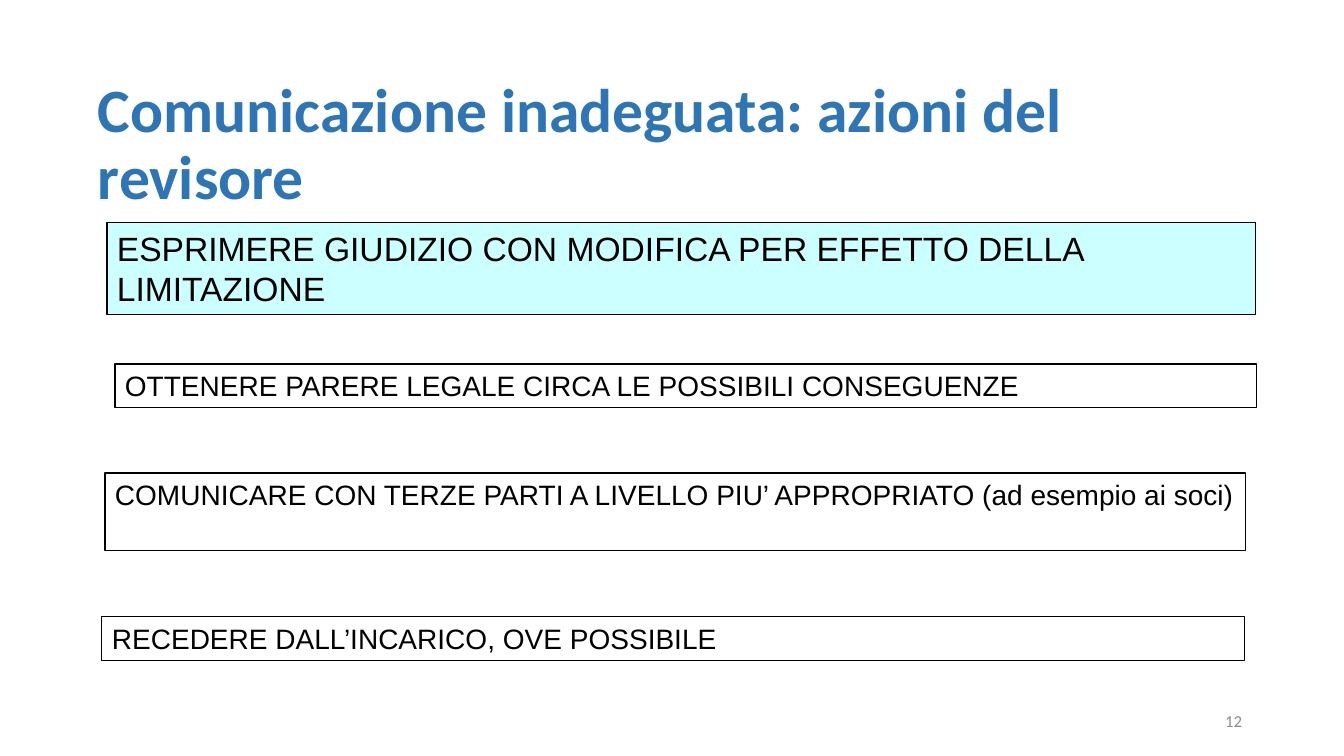
"""Build the slide on the auditor's actions after inadequate communication."""
from dataclasses import dataclass

from pptx import Presentation
from pptx.dml.color import RGBColor
from pptx.enum.shapes import MSO_SHAPE
from pptx.enum.text import MSO_ANCHOR, PP_ALIGN
from pptx.util import Emu, Pt

RECTANGLE = MSO_SHAPE.RECTANGLE
TOP, MIDDLE = MSO_ANCHOR.TOP, MSO_ANCHOR.MIDDLE
LEFT, RIGHT = PP_ALIGN.LEFT, PP_ALIGN.RIGHT
EMU_PER_PX = 914400 / 100.8


def px(length):
    return Emu(round(length * EMU_PER_PX))


@dataclass(frozen=True)
class Theme:
    heading_font: str = "Calibri"
    body_font: str = "Arial"
    title_color: str = "2E75B6"
    text_color: str = "000000"
    number_color: str = "8C8C8C"
    highlight: str = "CCFFFF"
    title_size: int = 44
    lead_size: int = 24
    action_size: int = 20
    number_size: int = 12
    border_width: float = 0.75


class SlideBuilder:
    def __init__(self, slide, theme):
        self.slide = slide
        self.theme = theme

    def set_text(self, shape, text, font_name, size, color, anchor=TOP, align=LEFT):
        frame = shape.text_frame
        frame.word_wrap = True
        frame.vertical_anchor = anchor
        paragraph = frame.paragraphs[0]
        paragraph.text = text
        paragraph.alignment = align
        paragraph.font.name = font_name
        paragraph.font.size = Pt(size)
        paragraph.font.color.rgb = RGBColor.from_string(color)
        return paragraph

    def title(self, text, *bounds):
        theme = self.theme
        shape = self.slide.shapes.add_textbox(*map(px, bounds))
        paragraph = self.set_text(shape, text, theme.heading_font, theme.title_size,
                                  theme.title_color, anchor=MIDDLE)
        paragraph.font.bold = True
        paragraph.line_spacing = 0.9

    def action(self, text, bounds, size, fill=None):
        theme = self.theme
        shape = self.slide.shapes.add_shape(RECTANGLE, *map(px, bounds))
        shape.shadow.inherit = False
        if fill:
            shape.fill.solid()
            shape.fill.fore_color.rgb = RGBColor.from_string(fill)
        else:
            shape.fill.background()
        shape.line.color.rgb = RGBColor.from_string(theme.text_color)
        shape.line.width = Pt(theme.border_width)
        self.set_text(shape, text, theme.body_font, size, theme.text_color)

    def page_number(self, number, *bounds):
        theme = self.theme
        shape = self.slide.shapes.add_textbox(*map(px, bounds))
        self.set_text(shape, str(number), theme.heading_font, theme.number_size,
                      theme.number_color, anchor=MIDDLE, align=RIGHT)


def main():
    presentation = Presentation()
    presentation.slide_width, presentation.slide_height = px(1344), px(756)
    theme = Theme()
    builder = SlideBuilder(presentation.slides.add_slide(presentation.slide_layouts[6]), theme)

    builder.title("Comunicazione inadeguata: azioni del revisore", 88, 73, 1195, 146)
    builder.action("ESPRIMERE GIUDIZIO CON MODIFICA PER EFFETTO DELLA LIMITAZIONE",
                   (107, 223, 1149, 92), theme.lead_size, theme.highlight)
    actions = [
        ("OTTENERE PARERE LEGALE CIRCA LE POSSIBILI CONSEGUENZE", (115, 364, 1142, 44)),
        ("COMUNICARE CON TERZE PARTI A LIVELLO PIU’ APPROPRIATO (ad esempio ai soci)",
         (105, 473, 1141, 78)),
        ("RECEDERE DALL’INCARICO, OVE POSSIBILE", (102, 617, 1143, 44)),
    ]
    for text, bounds in actions:
        builder.action(text, bounds, theme.action_size)
    builder.page_number(12, 950, 701, 302, 40)

    presentation.save("out.pptx")


if __name__ == "__main__":
    main()
